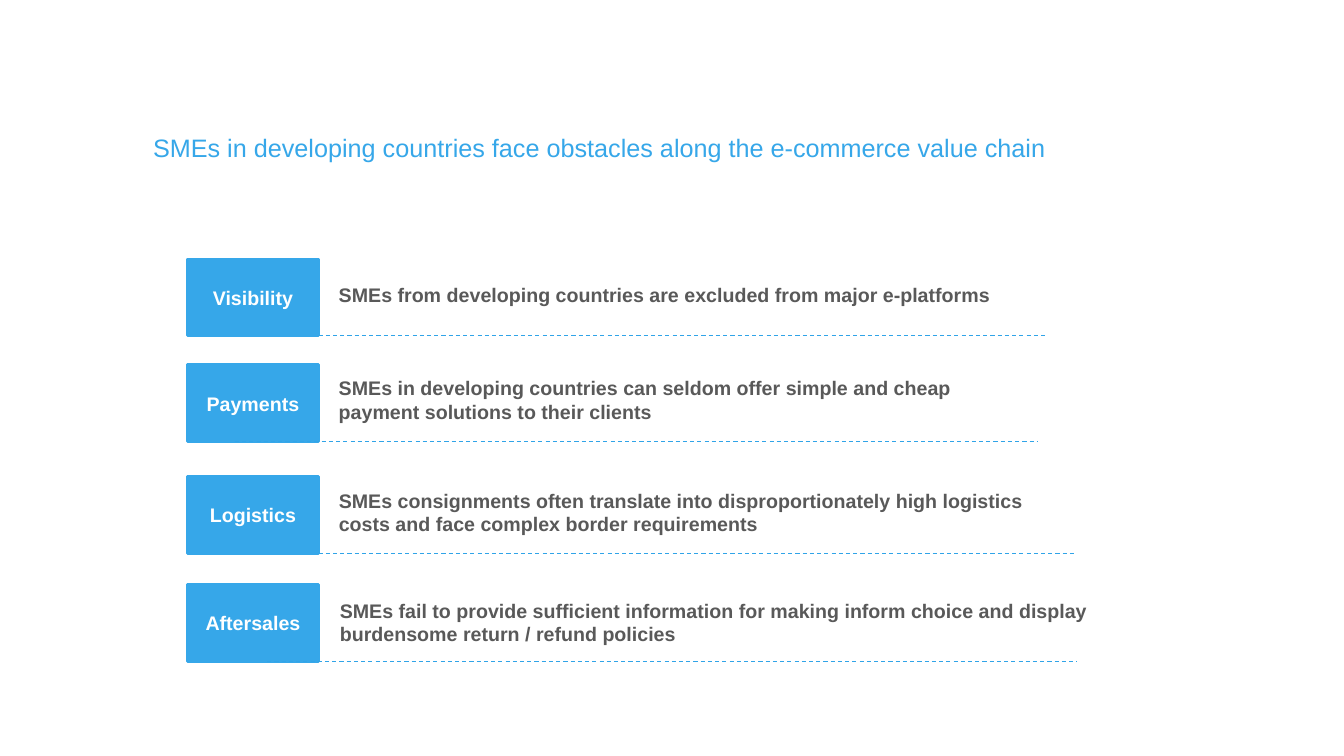
from lxml import etree
from pptx import Presentation
from pptx.dml.color import RGBColor
from pptx.enum.dml import MSO_LINE
from pptx.enum.shapes import MSO_CONNECTOR, MSO_SHAPE
from pptx.enum.text import MSO_ANCHOR, PP_ALIGN
from pptx.oxml.ns import qn
from pptx.util import Inches, Pt

STRAIGHT = MSO_CONNECTOR.STRAIGHT
RECTANGLE = MSO_SHAPE.RECTANGLE
DASH = MSO_LINE.DASH
MIDDLE, TOP = MSO_ANCHOR.MIDDLE, MSO_ANCHOR.TOP
CENTER, LEFT = PP_ALIGN.CENTER, PP_ALIGN.LEFT

WHITE = RGBColor(0xFF, 0xFF, 0xFF)
BLUE = RGBColor(0x36, 0xA7, 0xE9)
RULE_BLUE = RGBColor(0x30, 0xA4, 0xE8)
GRAY = RGBColor(0x59, 0x59, 0x59)

LABEL_LEFT, LABEL_WIDTH, LABEL_HEIGHT = 1.86, 1.3, 0.76
LINE_HEIGHT = 0.235

# Label, row top, text (left, top, width, lines), rule (start, end), description
OBSTACLES = [
    ("Visibility", 2.57, (3.36, 2.81, 7.8, 1), (3.16, 10.37),
     "SMEs from developing countries are excluded from major e-platforms"),
    ("Payments", 3.62, (3.36, 3.73, 6.93, 2), (2.33, 10.29),
     "SMEs in developing countries can seldom offer simple and cheap "
     "payment solutions to their clients"),
    ("Logistics", 4.73, (3.36, 4.85, 7.32, 2), (3.16, 10.68),
     "SMEs consignments often translate into disproportionately high "
     "logistics costs and face complex border requirements"),
    ("Aftersales", 5.8, (3.37, 5.94, 8.19, 2), (2.65, 10.68),
     "SMEs fail to provide sufficient information for making inform choice "
     "and display burdensome return / refund policies"),
]


def write(shape, text, size, color, bold=False, align=LEFT, anchor=TOP, inset=0):
    frame = shape.text_frame
    frame.word_wrap = True
    frame.vertical_anchor = anchor
    frame.margin_left = frame.margin_right = Inches(inset)
    frame.margin_top = frame.margin_bottom = Inches(inset / 2)
    frame.text = text
    paragraph = frame.paragraphs[0]
    paragraph.alignment = align
    font = paragraph.runs[0].font
    font.name, font.size, font.bold = "Arial", Pt(size), bold
    font.color.rgb = color


def add_title(slide, left, top, width, height):
    title = slide.shapes.add_textbox(*map(Inches, (left, top, width, height)))
    write(title, "SMEs in developing countries face obstacles along "
          "the e-commerce value chain", 18, BLUE, anchor=MIDDLE, inset=0.1)


def add_rule(slide, start, end, y):
    rule = slide.shapes.add_connector(
        STRAIGHT, Inches(start), Inches(y), Inches(end), Inches(y))
    rule.line.color.rgb = RULE_BLUE
    rule.line.width = Pt(0.75)
    rule.line.dash_style = DASH
    etree.SubElement(rule._element.spPr, qn("a:effectLst"))


def add_obstacle(slide, top, label, text_box, rule, description):
    # Blue label
    box = slide.shapes.add_shape(RECTANGLE, *map(
        Inches, (LABEL_LEFT, top, LABEL_WIDTH, LABEL_HEIGHT)))
    box.shadow.inherit = False
    box.fill.solid()
    box.fill.fore_color.rgb = BLUE
    box.line.color.rgb = BLUE
    box.line.width = Pt(2)
    write(box, label, 14, WHITE, bold=True, align=CENTER, anchor=MIDDLE)

    # Description
    left, text_top, width, lines = text_box
    body = slide.shapes.add_textbox(*map(
        Inches, (left, text_top, width, lines * LINE_HEIGHT)))
    write(body, description, 14, GRAY, bold=True)

    # Dashed rule along the bottom of the label
    add_rule(slide, *rule, top + LABEL_HEIGHT)


def main():
    presentation = Presentation()
    presentation.slide_width = Inches(13.33)
    presentation.slide_height = Inches(7.5)
    slide = presentation.slides.add_slide(presentation.slide_layouts[6])
    slide.background.fill.solid()
    slide.background.fill.fore_color.rgb = WHITE

    add_title(slide, 1.42, 1.23, 10.36, 0.47)
    for label, top, text_box, rule, description in OBSTACLES:
        add_obstacle(slide, top, label, text_box, rule, description)
    presentation.save("out.pptx")


if __name__ == "__main__":
    main()
